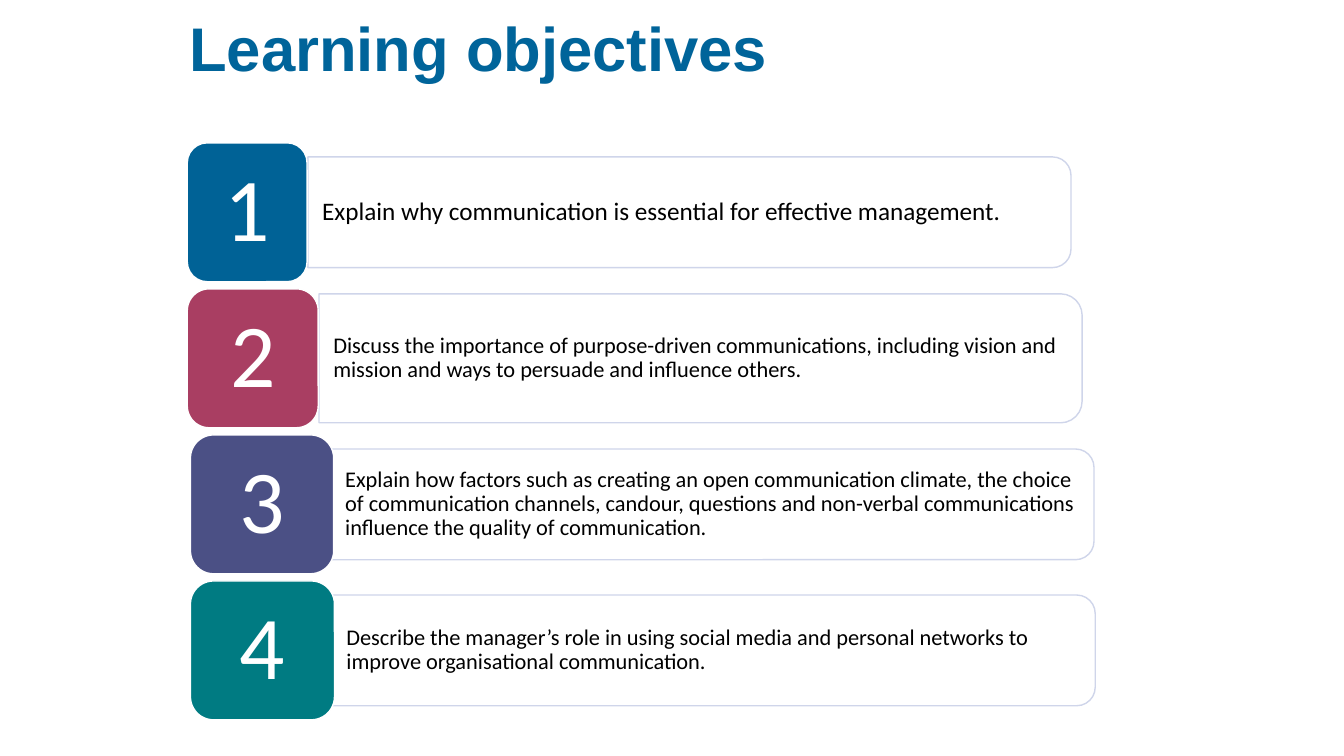
from dataclasses import dataclass

from lxml.etree import SubElement
from pptx import Presentation
from pptx.dml.color import RGBColor
from pptx.enum.shapes import MSO_SHAPE as Shape
from pptx.enum.text import MSO_ANCHOR as Anchor, PP_ALIGN as Align
from pptx.oxml.ns import qn
from pptx.util import Cm, Pt


@dataclass(frozen=True)
class Theme:
    heading_font: str = "Arial"
    body_font: str = "Calibri"
    heading: str = "00649A"
    body: str = "000000"
    white: str = "FFFFFF"
    panel_line: str = "CFD5EA"
    tiles: tuple = ("006296", "A93E62", "4B5085", "007B82")
    heading_size: int = 44
    number_size: int = 64
    lead_size: int = 18
    body_size: int = 16


@dataclass(frozen=True)
class Objective:
    text: str
    size: int
    color: str
    tile_left: float
    tile_width: float
    panel_left: float
    panel_height: float


THEME = Theme()
OBJECTIVES = [
    Objective("Explain why communication is essential for effective management.",
              THEME.lead_size, THEME.tiles[0], 4.72, 3.02, 7.76, 2.79),
    Objective("Discuss the importance of purpose-driven communications, including "
              "vision and mission and ways to persuade and influence others.",
              THEME.body_size, THEME.tiles[1], 4.72, 3.3, 8.04, 3.25),
    Objective("Explain how factors such as creating an open communication climate, "
              "the choice of communication channels, candour, questions and non-verbal "
              "communications influence the quality of communication.",
              THEME.body_size, THEME.tiles[2], 4.8, 3.61, 8.34, 2.79),
    Objective("Describe the manager’s role in using social media and personal "
              "networks to improve organisational communication.",
              THEME.body_size, THEME.tiles[3], 4.8, 3.63, 8.37, 2.79),
]
FIRST_CENTER, ROW_PITCH = 5.35, 3.68
TILE_HEIGHT, PANEL_LENGTH = 3.5, 19.23
TEXT_MARGIN = 0.13


class ObjectivesSlide:
    def __init__(self, slide, theme):
        self.slide = slide
        self.theme = theme

    def add_text(self, shape, text, font, size, color, anchor=Anchor.MIDDLE,
                 align=Align.LEFT, bold=False, insets=(0, 0, 0, 0)):
        """Fill a shape with one paragraph; insets run left, top, right, bottom in cm."""
        frame = shape.text_frame
        frame.word_wrap = True
        frame.vertical_anchor = anchor
        (frame.margin_left, frame.margin_top,
         frame.margin_right, frame.margin_bottom) = map(Cm, insets)
        paragraph = frame.paragraphs[0]
        paragraph.alignment = align
        paragraph.line_spacing = 0.9
        run = paragraph.add_run()
        run.text = text
        run.font.name = font
        run.font.size = Pt(size)
        run.font.bold = bold
        run.font.color.rgb = RGBColor.from_string(color)

    def block(self, kind, left, top, width, height, fill, line):
        shape = self.slide.shapes.add_shape(kind, Cm(left), Cm(top), Cm(width), Cm(height))
        shape.shadow.inherit = False
        shape.fill.solid()
        shape.fill.fore_color.rgb = RGBColor.from_string(fill)
        shape.line.color.rgb = RGBColor.from_string(line)
        shape.line.width = Pt(1)
        return shape

    def text_box(self, left, top, width, height):
        return self.slide.shapes.add_textbox(Cm(left), Cm(top), Cm(width), Cm(height))

    def title(self, text):
        theme = self.theme
        self.add_text(self.text_box(4.52, 0.18, 22.02, 2.08), text, theme.heading_font,
                      theme.heading_size, theme.heading, anchor=Anchor.BOTTOM, bold=True,
                      insets=(0.25, 0.13, 0.25, 0.13))

    def panel(self, objective, center):
        """Draw a bar turned by 90 degrees, so its rounded top faces right, and its text."""
        theme, height = self.theme, objective.panel_height
        middle = objective.panel_left + PANEL_LENGTH / 2
        bar = self.block(Shape.ROUND_2_SAME_RECTANGLE, middle - height / 2,
                         center - PANEL_LENGTH / 2, height, PANEL_LENGTH,
                         theme.white, theme.panel_line)
        bar.rotation = 90
        fill_color = bar.element.spPr.find(qn("a:solidFill"))[0]
        SubElement(fill_color, qn("a:alpha"), val="90000")
        box = self.text_box(objective.panel_left, center - height / 2 + TEXT_MARGIN,
                            PANEL_LENGTH - TEXT_MARGIN, height - 2 * TEXT_MARGIN)
        self.add_text(box, objective.text, theme.body_font, objective.size, theme.body,
                      insets=(0.36, 0, 0.2, 0))

    def tile(self, number, objective, center):
        theme = self.theme
        tile = self.block(Shape.ROUNDED_RECTANGLE, objective.tile_left,
                          center - TILE_HEIGHT / 2, objective.tile_width, TILE_HEIGHT,
                          objective.color, theme.white)
        self.add_text(tile, str(number), theme.body_font, theme.number_size, theme.white,
                      align=Align.CENTER)


def main():
    deck = Presentation()
    deck.slide_width, deck.slide_height = Cm(33.87), Cm(19.05)
    page = ObjectivesSlide(deck.slides.add_slide(deck.slide_layouts[6]), THEME)
    for index, objective in enumerate(OBJECTIVES):
        center = FIRST_CENTER + index * ROW_PITCH
        page.panel(objective, center)
        page.tile(index + 1, objective, center)
    page.title("Learning objectives")
    deck.save("out.pptx")


if __name__ == "__main__":
    main()
